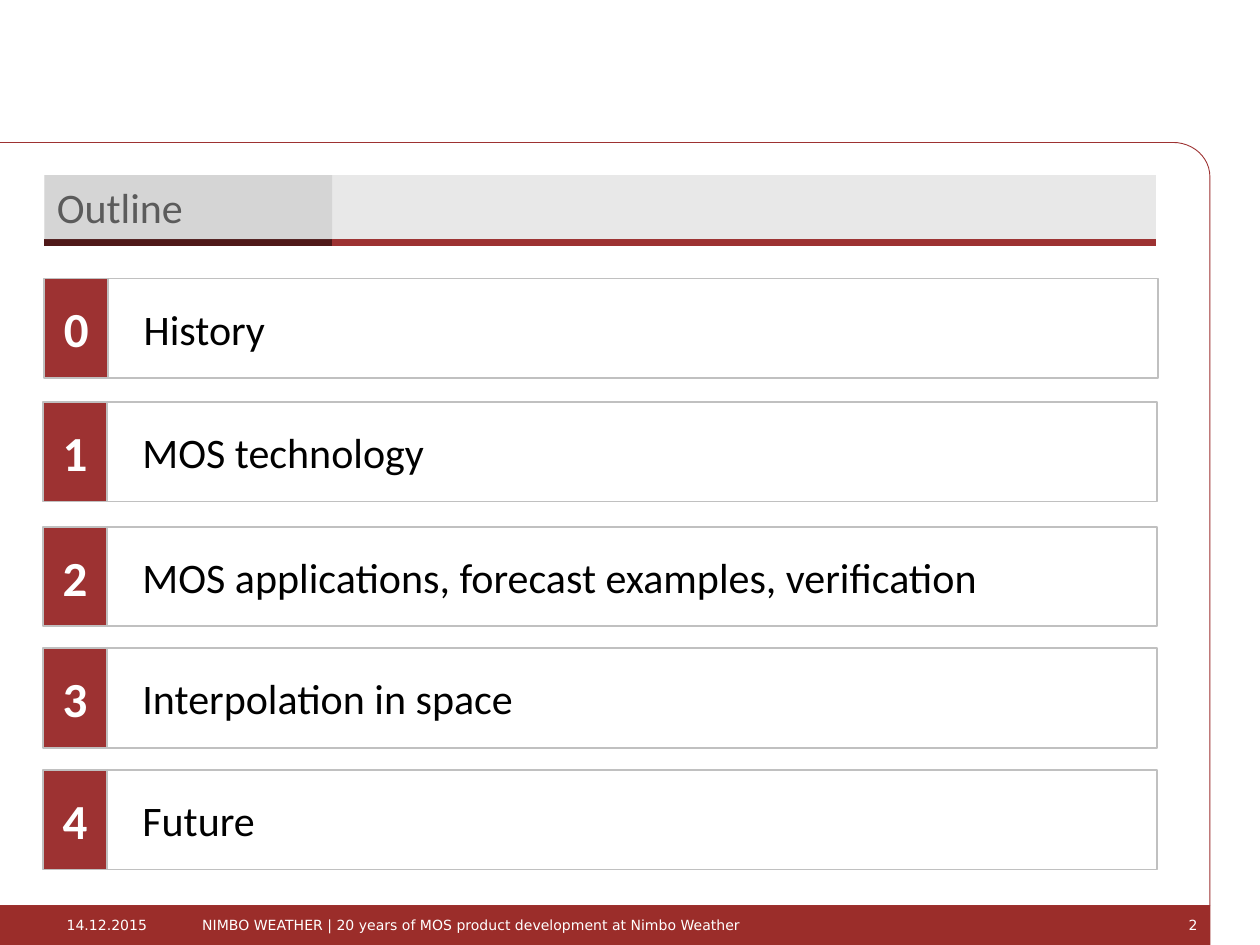
from math import cos, pi, sin

from lxml import etree
from pptx import Presentation
from pptx.dml.color import RGBColor
from pptx.enum.shapes import MSO_SHAPE
from pptx.enum.text import MSO_ANCHOR, PP_ALIGN
from pptx.oxml.ns import qn
from pptx.util import Pt

RECT, PROCESS = MSO_SHAPE.RECTANGLE, MSO_SHAPE.FLOWCHART_PROCESS
LEFT, CENTER, RIGHT = PP_ALIGN.LEFT, PP_ALIGN.CENTER, PP_ALIGN.RIGHT
MIDDLE = MSO_ANCHOR.MIDDLE

COLORS = {
    "red": "9D3232", "footer": "9B2D2A", "dark": "4F1919", "border": "C0C0C0",
    "band": "A6A6A6", "tab": "BFBFBF", "title": "0D0D0D", "black": "000000",
    "white": "FFFFFF",
}
TOPICS = [
    ("History", 25.2, 159.1),
    ("MOS technology", 24.5, 229.7),
    ("MOS applications, forecast examples, verification", 24.5, 301),
    ("Interpolation in space", 24.5, 370.5),
    ("Future", 24.5, 440),
]
BADGE_W, TOPIC_W, ROW_H = 36.7, 599.8, 56.9


class Deck:
    """Draws styled elements on the current slide, with lengths in points."""

    def __init__(self, width, height):
        self.prs = Presentation()
        self.prs.slide_width, self.prs.slide_height = Pt(width), Pt(height)
        self.s = self.prs.slides.add_slide(self.prs.slide_layouts[6])

    def color(self, name):
        return RGBColor.from_string(COLORS[name])

    def paint(self, sp, fill=None, line=None, width=1, alpha=None):
        sp.shadow.inherit = False
        if fill:
            sp.fill.solid()
            sp.fill.fore_color.rgb = self.color(fill)
            if alpha:
                clr = sp._element.spPr.find(qn("a:solidFill"))[0]
                etree.SubElement(clr, qn("a:alpha")).set("val", str(alpha * 1000))
        else:
            sp.fill.background()
        if line:
            sp.line.color.rgb = self.color(line)
            sp.line.width = Pt(width)
        else:
            sp.line.fill.background()

    def box(self, x, y, w, h, kind=RECT, **style):
        sp = self.s.shapes.add_shape(kind, Pt(x), Pt(y), Pt(w), Pt(h))
        self.paint(sp, **style)
        return sp

    def add_text(self, sp, text, size, color, font="Calibri", bold=False,
                 align=LEFT, insets=(7.2, 3.6, 7.2, 3.6)):
        tf = sp.text_frame
        tf.word_wrap = True
        tf.vertical_anchor = MIDDLE
        (tf.margin_left, tf.margin_top,
         tf.margin_right, tf.margin_bottom) = map(Pt, insets)
        p = tf.paragraphs[0]
        p.alignment = align
        r = p.add_run()
        r.text = text
        r.font.size, r.font.name, r.font.bold = Pt(size), font, bold
        r.font.color.rgb = self.color(color)

    def footer_text(self, text, x, w, align=LEFT):
        sp = self.s.shapes.add_textbox(Pt(x), Pt(517), Pt(w), Pt(23))
        self.add_text(sp, text, 8, "white", "DejaVu Sans", align=align)

    def frame(self, left, top, right, bottom, rx, ry, steps=12):
        angles = [pi / 2 * i / steps for i in range(steps + 1)]
        corner = [(right - rx + rx * sin(a), top + ry - ry * cos(a)) for a in angles]
        points = corner + [(right, bottom), (left, bottom)]
        fb = self.s.shapes.build_freeform(Pt(left), Pt(top))
        fb.add_line_segments([(Pt(x), Pt(y)) for x, y in points], close=True)
        self.paint(fb.convert_to_shape(), line="red", width=0.5)

    def topic(self, number, text, x, y):
        sp = self.box(x + BADGE_W, y, TOPIC_W, ROW_H, line="border")
        self.add_text(sp, text, 24, "black", insets=(20.2, 5.8, 5.8, 5.8))
        sp = self.box(x, y, BADGE_W, ROW_H, fill="red", line="border")
        self.add_text(sp, str(number), 28, "white", bold=True, align=CENTER,
                      insets=(0, 0, 0, 0))


def main():
    deck = Deck(720, 540)
    deck.frame(-0.7, 81.4, 691.4, 517.5, 21, 19.5)
    deck.box(0, 517.5, 691.7, 22.5, fill="footer")
    deck.footer_text("14.12.2015", 31, 70)
    deck.footer_text("NIMBO WEATHER | 20 years of MOS product development at Nimbo Weather",
                     108.5, 513)
    deck.footer_text("2", 636, 55.4, RIGHT)

    deck.box(25.4, 136.7, 164.4, 3.8, PROCESS, fill="dark")
    deck.box(189.8, 136.7, 470.8, 3.8, PROCESS, fill="red")
    title = deck.box(25.4, 100, 635.2, 36.7, fill="band", alpha=25)
    deck.add_text(title, "Outline", 24, "title")
    deck.box(25.4, 100, 164.4, 36.7, fill="tab", alpha=44)

    for number, (text, x, y) in enumerate(TOPICS):
        deck.topic(number, text, x, y)
    deck.prs.save("out.pptx")


if __name__ == "__main__":
    main()
